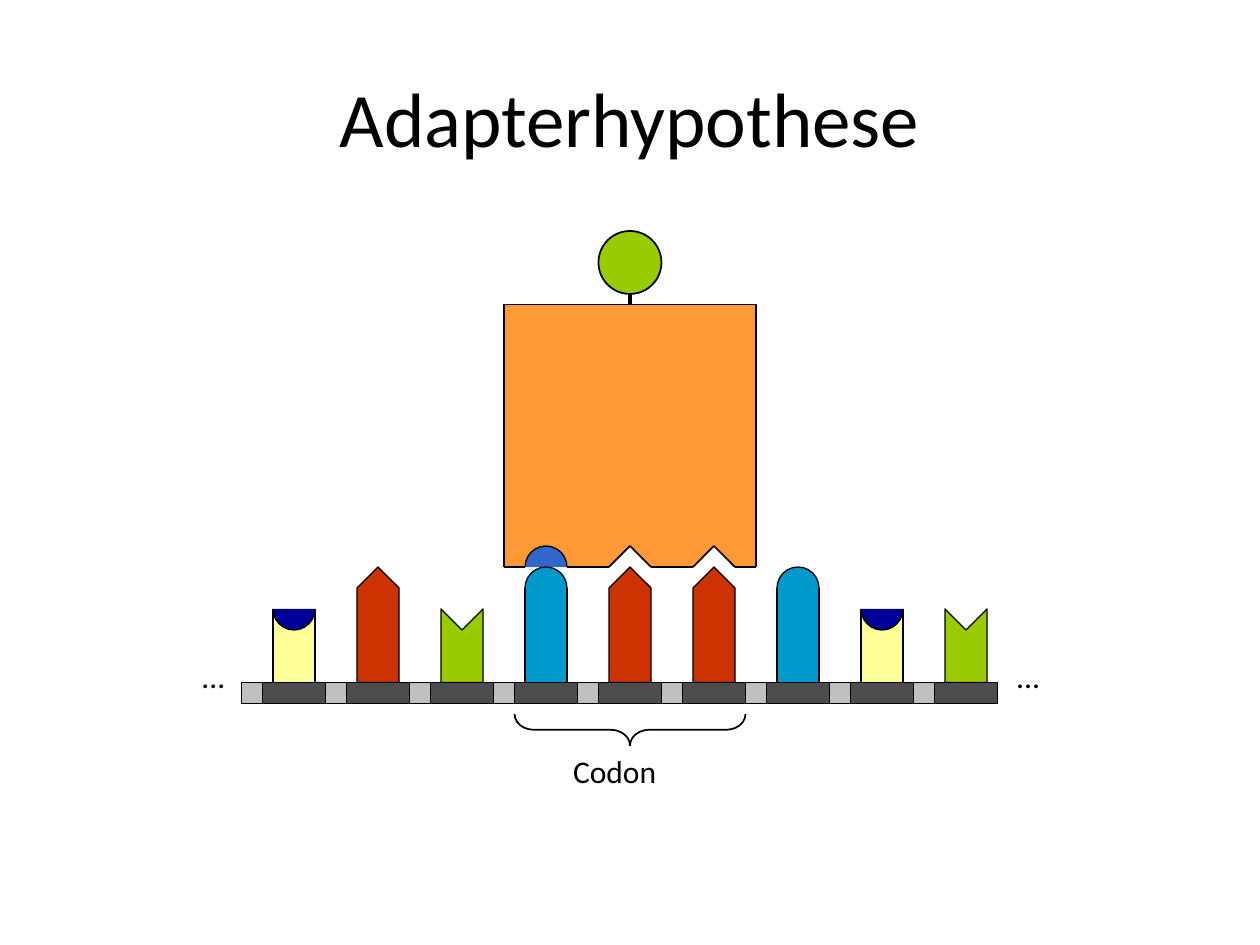
from lxml.etree import SubElement
from pptx import Presentation
from pptx.dml.color import RGBColor
from pptx.enum.shapes import MSO_CONNECTOR, MSO_SHAPE
from pptx.enum.text import MSO_ANCHOR, PP_ALIGN
from pptx.oxml.ns import qn
from pptx.util import Inches, Pt

COLORS = {
    "ink": "000000",
    "adapter": "FF9933",
    "pocket": "3366CC",
    "round": "0099CC",
    "cup": "FFFF99",
    "cup_top": "000099",
    "notch": "99CC00",
    "point": "CC3300",
    "link": "C0C0C0",
    "nucleotide": "4D4D4D",
}
COLUMNS, ROWS = 60, 45
STRAND_TOP, STRAND_LEFT, STEP = 32.5, 11.5, 4
SEQUENCE = ["cup", "point", "notch", "round", "point", "point", "round", "cup", "notch"]
UPPER_HALF, LOWER_HALF = (108, 0), (0, 108)
ADAPTER_PARTS = [(24, 26, 5, 1), (31, 26, 2, 1), (35, 26, 1, 1), (24, 14.5, 12, 11.5)]
ADAPTER_EDGE = [(25, 27), (24, 27), (24, 14.5), (36, 14.5), (36, 27), (35, 27),
                (34, 26), (33, 27), (31, 27), (30, 26), (29, 27), (27, 27)]


class Sketch:
    """Draw styled elements on the current slide, measured in grid columns and rows."""

    def __init__(self, deck):
        self.column = deck.slide_width / COLUMNS
        self.row = deck.slide_height / ROWS
        self.slide = deck.slides.add_slide(deck.slide_layouts[6])
        self.shapes = self.slide.shapes
        self.font = {"name": "Calibri", "size": Pt(18)}

    def place(self, *lengths):
        return [round(length * (self.row if index % 2 else self.column))
                for index, length in enumerate(lengths)]

    def color(self, name):
        return RGBColor.from_string(COLORS[name])

    def paint(self, shape, fill, weight):
        shape.shadow.inherit = False
        if fill:
            shape.fill.solid()
            shape.fill.fore_color.rgb = self.color(fill)
        else:
            shape.fill.background()
        if weight:
            shape.line.color.rgb = self.color("ink")
            shape.line.width = Pt(weight)
        else:
            shape.line.fill.background()
        return shape

    def preset(self, kind, bounds, fill=None, weight=1, adjustments=()):
        shape = self.shapes.add_shape(kind, *self.place(*bounds))
        for index, value in enumerate(adjustments):
            shape.adjustments[index] = value
        return self.paint(shape, fill, weight)

    def outline(self, points, fill, weight):
        start, *others = [self.place(*point) for point in points]
        builder = self.shapes.build_freeform(*start)
        builder.add_line_segments(others, close=True)
        return self.paint(builder.convert_to_shape(), fill, weight)

    def line(self, start, end, weight):
        connector = self.shapes.add_connector(
            MSO_CONNECTOR.STRAIGHT, *self.place(*start, *end))
        connector.line.color.rgb = self.color("ink")
        connector.line.width = Pt(weight)
        SubElement(connector.element.spPr, qn("a:effectLst"))

    def text(self, words, bounds, align=PP_ALIGN.LEFT, anchor=MSO_ANCHOR.TOP, **font):
        frame = self.shapes.add_textbox(*self.place(*bounds)).text_frame
        para = frame.paragraphs[0]
        span = para.add_run()
        span.text = words
        span.font.color.rgb = self.color("ink")
        formats = [
            (frame, {"word_wrap": True, "vertical_anchor": anchor}),
            (para, {"alignment": align}),
            (span.font, {**self.font, **font}),
        ]
        for target, values in formats:
            for name, value in values.items():
                setattr(target, name, value)

    def curved_base(self, kind, left):
        top, cap, half = ((28, "round", UPPER_HALF) if kind == "round"
                          else (29, "cup_top", LOWER_HALF))
        self.preset(MSO_SHAPE.RECTANGLE, (left, top, 2, STRAND_TOP - top), kind, 0)
        for side in (left, left + 2):
            self.line((side, STRAND_TOP), (side, top), 0.75)
        self.preset(MSO_SHAPE.ARC, (left, top - 1, 2, 2), cap, 0.75, half)
        if kind == "cup":
            self.line((left, STRAND_TOP), (left + 2, STRAND_TOP), 0.75)

    def pointed_base(self, kind, left):
        shoulder, center = (28, 27) if kind == "point" else (29, 30)
        self.outline([(left, STRAND_TOP), (left, shoulder), (left + 1, center),
                      (left + 2, shoulder), (left + 2, STRAND_TOP)], kind, 0.75)

    def strand(self):
        for index, kind in enumerate(SEQUENCE):
            left = STRAND_LEFT + index * STEP
            base = self.curved_base if kind in ("round", "cup") else self.pointed_base
            base(kind, left + 1.5)
            self.preset(MSO_SHAPE.RECTANGLE, (left, STRAND_TOP, 1, 1), "link")
            self.preset(MSO_SHAPE.RECTANGLE, (left + 1, STRAND_TOP, 3, 1), "nucleotide")

    def adapter(self):
        self.line((30, 13), (30, 15.5), 2.25)
        for bounds in ADAPTER_PARTS:
            self.preset(MSO_SHAPE.RECTANGLE, bounds, "adapter", 0)
        for tip in (30, 34):
            self.outline([(tip - 1, 27), (tip, 26), (tip + 1, 27),
                          (tip + 1, 26), (tip - 1, 26)], "adapter", 0)
        self.preset(MSO_SHAPE.ARC, (25, 26, 2, 2), "pocket", 0.75, UPPER_HALF)
        for start, end in zip(ADAPTER_EDGE, ADAPTER_EDGE[1:]):
            self.line(start, end, 1)
        self.preset(MSO_SHAPE.OVAL, (28.5, 11, 3, 3), "notch")


def main():
    deck = Presentation()
    deck.slide_width, deck.slide_height = Inches(10), Inches(7.5)
    sketch = Sketch(deck)
    sketch.adapter()
    sketch.text("Adapterhypothese", (3, 1.8, 54, 7.5), PP_ALIGN.CENTER,
                MSO_ANCHOR.MIDDLE, size=Pt(44))
    sketch.strand()
    for left in (9, 47.8):
        sketch.text("...", (left, 31, 2.7, 3))
    brace = sketch.preset(MSO_SHAPE.LEFT_BRACE, (29.25, 29.25, 1.5, 11),
                          adjustments=(0.61, 0.5))
    brace.rotation = 270
    sketch.text("Codon", (26.7, 35.5, 6.5, 3))
    deck.save("out.pptx")


if __name__ == "__main__":
    main()
